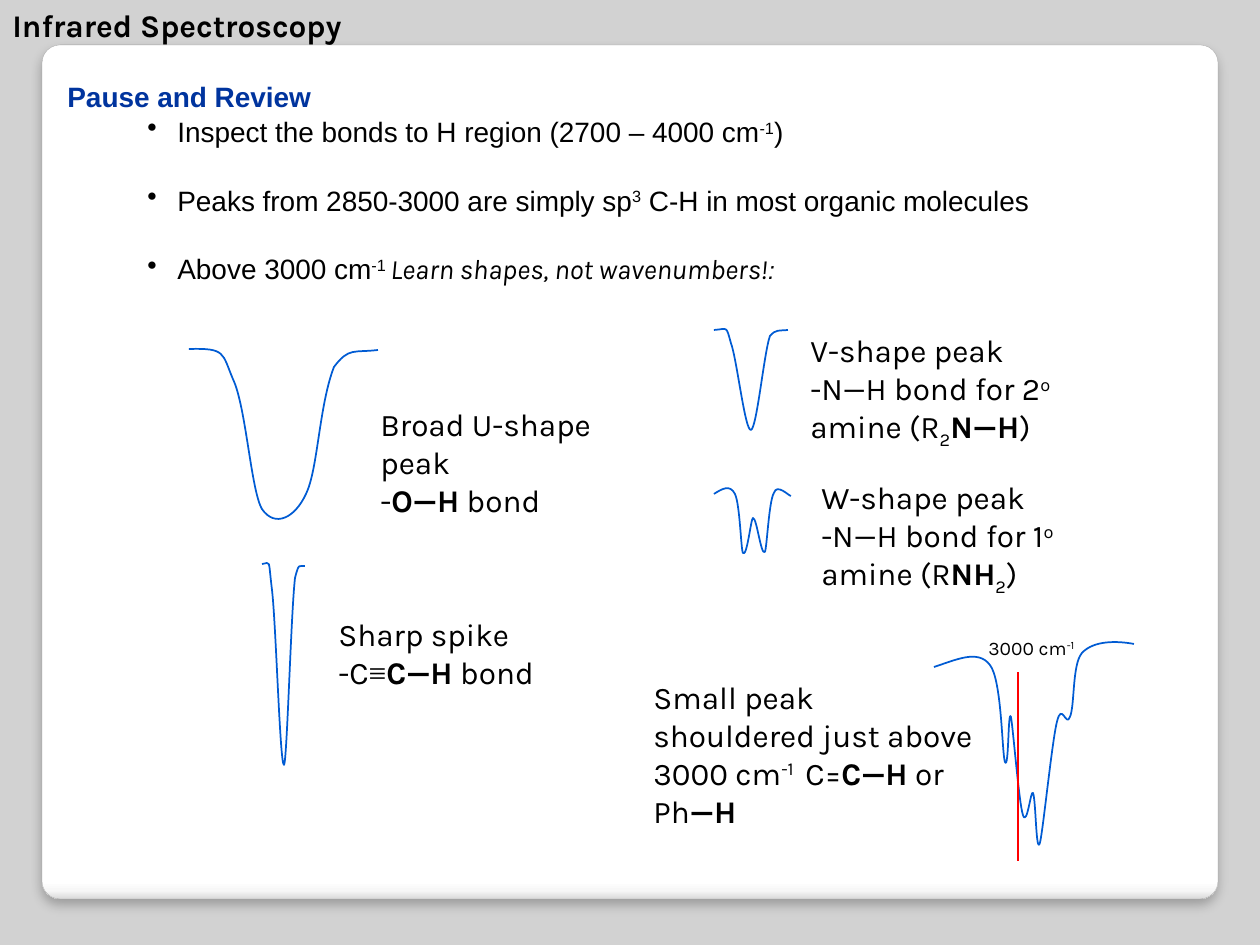
"""Build the infrared spectroscopy review slide."""
from lxml.etree import SubElement
from pptx import Presentation
from pptx.dml.color import RGBColor
from pptx.enum.shapes import MSO_CONNECTOR as CONN, MSO_SHAPE as SHAPE
from pptx.enum.text import MSO_AUTO_SIZE as FIT
from pptx.oxml import parse_xml
from pptx.oxml.ns import nsdecls, qn
from pptx.util import Pt

PX = 914400 / 126
BLUE, RED, NAVY, BLACK = "005BD3", "FF0000", "00349E", "000000"
BASELINES = {"sup": "30000", "sub": "-25000"}

U_PEAK = [(189, 349), (226, 348), (222, 353), (233, 379), (246, 406), (251, 490), (262, 509),
          (275, 528), (295, 518), (306, 494), (318, 470), (319, 406), (334, 367),
          (349, 347), (354, 353), (378, 350)]
V_PEAK = [(714, 330), (728, 329), (726, 325), (731, 343), (737, 359), (745, 431), (751, 430),
          (757, 428), (764, 353), (770, 336), (776, 329), (779, 331), (788, 330)]
SPIKE = [(262, 564), (271, 563), (268, 557), (272, 590), (276, 624), (280, 766), (284, 765),
         (287, 762), (291, 612), (295, 578), (299, 562), (299, 567), (305, 566)]
W_PEAK = [(714, 494), (722, 489), (730, 484), (735, 494), (740, 504), (741, 549), (743, 553),
          (747, 558), (751, 519), (753, 518), (757, 518), (761, 556), (765, 552),
          (767, 548), (769, 501), (774, 493), (777, 483), (789, 496), (791, 496)]
SHOULDER = [(934, 667), (956, 660), (978, 649), (990, 665), (1002, 680), (1002, 753), (1005, 762),
            (1009, 771), (1008, 708), (1011, 717), (1013, 726), (1019, 803), (1023, 815),
            (1027, 828), (1031, 789), (1033, 793), (1036, 798), (1036, 856), (1040, 843),
            (1043, 832), (1052, 742), (1057, 722), (1062, 701), (1066, 728), (1070, 717),
            (1075, 706), (1072, 665), (1082, 653), (1094, 640), (1118, 641), (1134, 644)]

LABELS = [
    ((368, 399, 308, 127), True, [[("Broad U-shape peak", "")],
                                  [("-", ""), ("O—H", "b"), (" bond", "")]]),
    ((798, 325, 325, 127), True, [[("V-shape peak", "")],
                                  [("-N—H bond for 2", ""), ("o", "sup"), (" amine (R", ""),
                                   ("2", "sub"), ("N—H", "b"), (")", "")]]),
    ((326, 609, 228, 89), False, [[("Sharp spike", "")],
                                  [("-C", ""), ("≡", "serif"), ("C—H", "b"), (" bond", "")]]),
    ((809, 472, 325, 127), True, [[("W-shape peak", "")],
                                  [("-N—H bond for 1", ""), ("o", "sup"), (" amine (R", ""),
                                   ("NH", "b"), ("2", "sub"), (")", "")]]),
    ((641, 672, 346, 165), True, [[("Small peak shouldered just above 3000 cm", ""), ("-1 ", "sup"),
                                   (" C=", ""), ("C—H", "b"), (" or Ph", ""), ("—H", "b")]]),
]

BULLETS = [
    [("Inspect the bonds to H region (2700 – 4000 cm", ""), ("-1", "sup"), (")", "")],
    [("Peaks from 2850-3000 are simply sp", ""), ("3", "sup"),
     (" C-H in most organic molecules", "")],
    [("Above 3000 cm", ""), ("-1 ", "sup"), ("Learn shapes, not wavenumbers!", "karla"),
     (":", "small")],
]


def px(*values):
    """Turn px lengths into EMU."""
    return [round(v * PX) for v in values]


def color(value):
    """Return the colour of a hex string."""
    return RGBColor.from_string(value)


def set_line(shape, value, width):
    """Give a shape or connector a solid line."""
    shape.line.color.rgb = color(value)
    shape.line.width = Pt(width)


def add_card(shapes):
    """Draw the white rounded card with its shaded foot and soft shadow."""
    sp = shapes.add_shape(SHAPE.ROUNDED_RECTANGLE, *px(42, 45, 1176, 854))
    sp.adjustments[0] = 0.021
    set_line(sp, "A4A4A4", 0.16)
    stops = [(0, "FFFFFF"), (98, "FFFFFF"), (99, "F7F7F7"), (100, "DADADA")]
    stop_xml = "".join(f'<a:gs pos="{pos * 1000}"><a:srgbClr val="{c}"/></a:gs>' for pos, c in stops)
    sp_pr = sp._element.spPr
    sp_pr.insert(2, parse_xml(f'<a:gradFill {nsdecls("a")}><a:gsLst>{stop_xml}</a:gsLst>'
                              '<a:lin ang="5400000" scaled="0"/></a:gradFill>'))
    sp_pr.append(parse_xml(
        f'<a:effectLst {nsdecls("a")}><a:outerShdw blurRad="{Pt(6)}" dist="{Pt(4)}" dir="5400000">'
        '<a:srgbClr val="000000"><a:alpha val="25000"/></a:srgbClr></a:outerShdw></a:effectLst>'))


def add_curve(shapes, points):
    """Draw a smooth peak; each three points after the first make a Bézier segment."""
    builder = shapes.build_freeform(*points[0], scale=PX)
    builder.add_line_segments(points[1:], close=False)
    sp = builder.convert_to_shape()
    sp.shadow.inherit = False
    sp.fill.background()
    set_line(sp, BLUE, 1)
    outline = sp._element.find(".//" + qn("a:path"))
    segments = outline.findall(qn("a:lnTo"))
    for i in range(0, len(segments), 3):
        curve = SubElement(outline, qn("a:cubicBezTo"))
        for segment in segments[i:i + 3]:
            curve.append(segment[0])
            outline.remove(segment)


def add_marker(shapes, x, top, bottom):
    """Draw the red wavenumber line."""
    line = shapes.add_connector(CONN.STRAIGHT, *px(x, bottom, x, top))
    set_line(line, RED, 1)
    SubElement(line._element.spPr, qn("a:effectLst"))


def fill_paragraph(p, runs, size, font="Karla", value=BLACK, bold=None):
    """Write styled runs into a paragraph."""
    p.font.size, p.font.name, p.font.bold = Pt(size), font, bold
    p.font.color.rgb = color(value)
    for text, style in runs:
        r = p.add_run()
        r.text = text
        if style == "b":
            r.font.bold = True
        elif style == "serif":
            r.font.name = "Times New Roman"
        elif style == "karla":
            r.font.name, r.font.italic = "Karla", True
        elif style == "small":
            r.font.size, r.font.italic = Pt(14), True
        elif style in BASELINES:
            r._r.get_or_add_rPr().set("baseline", BASELINES[style])


def add_box(shapes, box, wrap=True):
    """Add an empty text box and return its text frame."""
    tf = shapes.add_textbox(*px(*box)).text_frame
    tf.word_wrap = wrap
    tf.auto_size = FIT.SHAPE_TO_FIT_TEXT
    return tf


def add_label(shapes, box, paragraphs, size=18, wrap=True, bold=None):
    """Add a text box holding one or more paragraphs."""
    tf = add_box(shapes, box, wrap)
    for i, runs in enumerate(paragraphs):
        p = tf.add_paragraph() if i else tf.paragraphs[0]
        fill_paragraph(p, runs, size, bold=bold)


def set_indent(p, left, first):
    """Set the left margin and first-line indent of a paragraph."""
    p_pr = p._p.get_or_add_pPr()
    for name, value in zip(("marL", "indent"), px(left, first)):
        p_pr.set(name, str(value))
    return p_pr


def add_review(shapes):
    """Add the heading with its bulleted points."""
    tf = add_box(shapes, (0, 73, 1166, 217))
    heading = tf.paragraphs[0]
    fill_paragraph(heading, [("Pause and Review", "")], 16, "Arial", NAVY, True)
    set_indent(heading, 118, -63)
    for i, runs in enumerate(BULLETS):
        p = tf.add_paragraph()
        p.level = 1
        p.space_before = Pt(20 if i else 1)
        fill_paragraph(p, runs, 16, "Arial")
        p_pr = set_indent(p, 165, -30)
        p_pr.find(qn("a:defRPr")).addprevious(parse_xml(f'<a:buChar {nsdecls("a")} char="•"/>'))


def main():
    """Build and save the slide."""
    prs = Presentation()
    prs.slide_width, prs.slide_height = px(1260, 945)
    s = prs.slides.add_slide(prs.slide_layouts[6])
    s.background.fill.solid()
    s.background.fill.fore_color.rgb = color("D2D2D2")
    add_card(s.shapes)
    add_label(s.shapes, (0, 0, 378, 50), [[("Infrared Spectroscopy", "")]], wrap=False, bold=True)
    add_review(s.shapes)
    for points in (U_PEAK, V_PEAK, SPIKE, W_PEAK):
        add_curve(s.shapes, points)
    group = s.shapes.add_group_shape()
    add_curve(group.shapes, SHOULDER)
    add_marker(group.shapes, 1018, 672, 861)
    add_label(group.shapes, (976, 630, 111, 37), [[("3000 cm", ""), ("-1", "sup")]], 11, False)
    for box, wrap, paragraphs in LABELS:
        add_label(s.shapes, box, paragraphs, wrap=wrap)
    prs.save("out.pptx")


if __name__ == "__main__":
    main()
